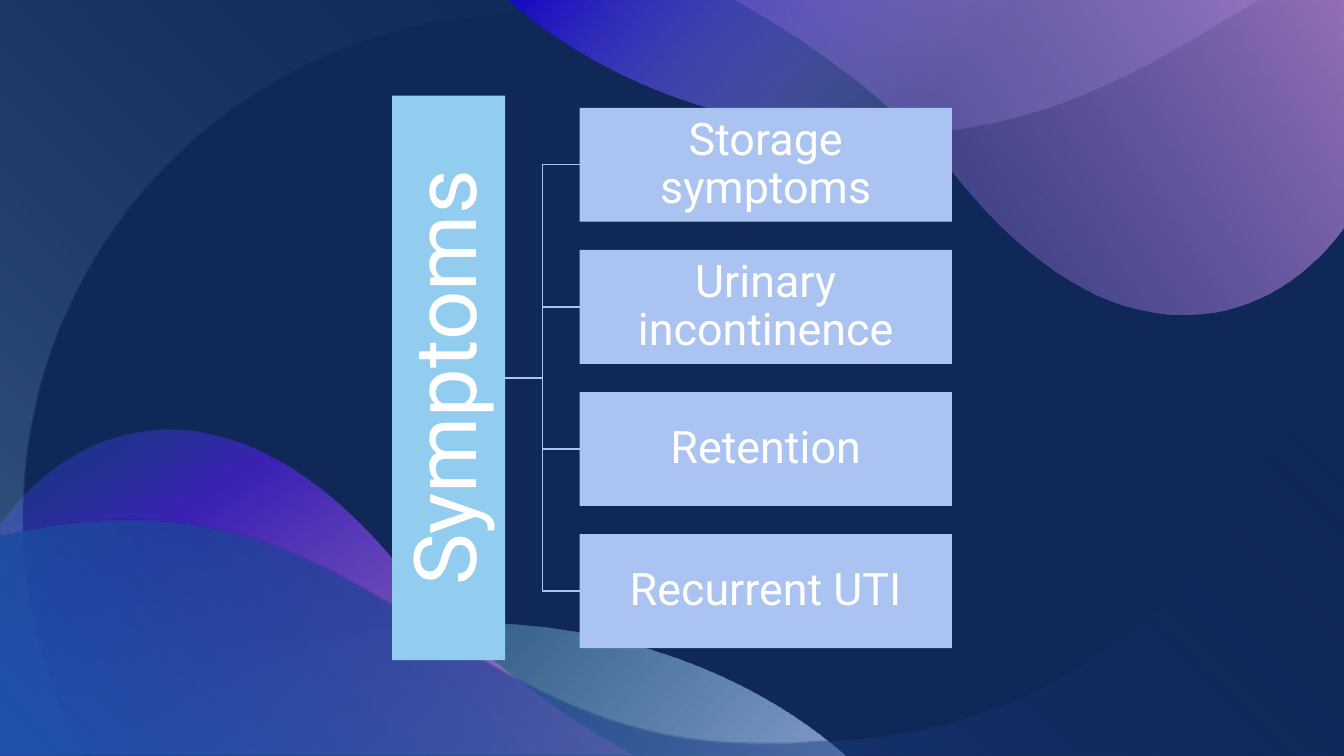
from math import cos, radians, sin

from pptx import Presentation
from pptx.dml.color import RGBColor
from pptx.enum.shapes import MSO_CONNECTOR, MSO_SHAPE
from pptx.enum.text import MSO_ANCHOR, PP_ALIGN
from pptx.oxml import parse_xml
from pptx.oxml.ns import nsdecls, qn
from pptx.util import Inches, Pt

NAVY, SKY, PERIWINKLE, WHITE = "102857", "92CDF0", "ABC3F0", "FFFFFF"
PINK, ROYAL = "F6A6F4", "1F51AE"

CREST = [(4.55, 6.18), (6.24, 6.17, 7.55, 6.77, 8.37, 7.48), (8.39, 7.5),
         (0.93, 7.5), (1.3, 7.28), (2.26, 6.7, 3.24, 6.19, 4.55, 6.18)]
LEFT_WAVE = [(0.01, 7.49), (6.28, 7.49), (5.93, 7.29),
             (5.15, 6.81, 4.45, 6.23, 3.97, 5.64),
             (2.42, 3.73, 0.88, 4.05, 0.06, 5.13), (0.01, 5.2)]
RIGHT_WAVE = [(13.34, 0), (7.29, 0), (7.62, 0.19),
              (8.38, 0.65, 9.05, 1.21, 9.51, 1.78),
              (11.01, 3.63, 12.51, 3.33, 13.3, 2.28), (13.34, 2.21)]
FRAME = [(-0.02, 0), (3.42, 0), (3.56, 0), (13.34, 0), (13.34, 2.17), (13.16, 2.21),
         (12.8, 2.3, 12.4, 2.34, 11.97, 2.34),
         (9.54, 2.33, 8.49, 0.17, 5.9, 0.13),
         (5.75, 0.12, 5.6, 0.13, 5.45, 0.13), (5.2, 0.15), (4.97, 0.16),
         (3.1, 0.25, 1.5, 1.38, 0.73, 2.98), (0.69, 3.07), (0.67, 3.12),
         (0.63, 3.19, 0.6, 3.26, 0.58, 3.33), (0.56, 3.39), (0.54, 3.43),
         (0.35, 3.96, 0.24, 4.54, 0.24, 5.14),
         (0.24, 5.92, 0.42, 6.65, 0.73, 7.3), (0.83, 7.5), (0.35, 7.5),
         (-0.02, 7.5), (-0.02, 3.06), (-0.03, 3.06), (-0.03, 2.21),
         (-0.02, 2.21), (-0.02, 1.8)]

CORNER_GLOW = ('<a:path path="circle"><a:fillToRect l="0" t="100000" '
               'r="100000" b="0"/></a:path>')


def color(value):
    return RGBColor.from_string(value)


def linear(degrees):
    return f'<a:lin ang="{degrees * 60000}" scaled="0"/>'


def half_turn(outline, width, height):
    return [tuple((height if i % 2 else width) - value for i, value in enumerate(step))
            for step in outline]


def to_local(step, bounds, rotation):
    left, top, width, height = bounds
    turn = radians(-rotation)
    points = []
    for x, y in zip(step[::2], step[1::2]):
        dx, dy = x - left - width / 2, y - top - height / 2
        points.append((Inches(width / 2 + dx * cos(turn) - dy * sin(turn)),
                       Inches(height / 2 + dx * sin(turn) + dy * cos(turn))))
    return points


def bend_lines(wave, steps, bounds):
    outline = wave._element.spPr.find(".//" + qn("a:path"))
    outline.set("w", str(Inches(bounds[2])))
    outline.set("h", str(Inches(bounds[3])))
    tags = ["moveTo"] + ["lnTo" if len(step) == 1 else "cubicBezTo" for step in steps[1:]]
    for node, tag, step in zip(list(outline), tags, steps):
        points = "".join(f'<a:pt x="{x}" y="{y}"/>' for x, y in step)
        outline.replace(node, parse_xml(f'<a:{tag} {nsdecls("a")}>{points}</a:{tag}>'))


def add_wave(slide, outline, bounds, stops, direction, rotation=0):
    steps = [to_local(step, bounds, rotation) for step in outline]
    builder = slide.shapes.build_freeform(*steps[0][0])
    builder.add_line_segments([step[-1] for step in steps[1:]], close=True)
    wave = builder.convert_to_shape()
    bend_lines(wave, steps, bounds)
    wave.left, wave.top, wave.width, wave.height = map(Inches, bounds)
    wave.rotation = rotation
    wave.shadow.inherit = False
    wave.line.fill.background()
    wave.fill.solid()
    stop_xml = "".join(
        f'<a:gs pos="{position * 1000}"><a:srgbClr val="{tone}">'
        f'<a:alpha val="{alpha * 1000}"/></a:srgbClr></a:gs>'
        for position, tone, alpha in stops)
    gradient = parse_xml(f'<a:gradFill {nsdecls("a")} rotWithShape="1">'
                         f'<a:gsLst>{stop_xml}</a:gsLst>{direction}</a:gradFill>')
    properties = wave._element.spPr
    properties.replace(properties.find(qn("a:solidFill")), gradient)


def add_box(slide, text, left, top, width, height, fill, size, inset):
    box = slide.shapes.add_shape(MSO_SHAPE.RECTANGLE, Inches(left), Inches(top),
                                 Inches(width), Inches(height))
    box.shadow.inherit = False
    box.fill.solid()
    box.fill.fore_color.rgb = color(fill)
    box.line.fill.background()
    frame = box.text_frame
    frame.word_wrap = True
    frame.vertical_anchor = MSO_ANCHOR.MIDDLE
    frame.margin_left = frame.margin_right = Inches(inset)
    frame.margin_top = frame.margin_bottom = Inches(inset)
    paragraph = frame.paragraphs[0]
    paragraph.text = text
    paragraph.alignment = PP_ALIGN.CENTER
    paragraph.line_spacing = 0.9
    paragraph.font.name = "Roboto"
    paragraph.font.size = Pt(size)
    paragraph.font.color.rgb = color(WHITE)
    return box


def add_branch(slide, parent, child):
    branch = slide.shapes.add_connector(MSO_CONNECTOR.ELBOW, 0, 0, 0, 0)
    branch.begin_connect(parent, 3)
    branch.end_connect(child, 1)
    branch.line.color.rgb = color(PERIWINKLE)
    branch.line.width = Pt(1)
    branch._element.spPr.append(parse_xml(f'<a:effectLst {nsdecls("a")}/>'))


def add_background(slide):
    slide.background.fill.solid()
    slide.background.fill.fore_color.rgb = color(NAVY)
    add_wave(slide, CREST, (0.93, 6.18, 7.46, 1.32),
             [(0, "64DFED", 0), (99, PERIWINKLE, 72)], linear(220), 180)
    add_wave(slide, LEFT_WAVE, (-0.16, 4.57, 6.61, 3.54),
             [(3, PINK, 54), (72, "3B21B4", 100), (97, ROYAL, 21)], linear(225), 11.8)
    add_wave(slide, FRAME, (-0.03, 0, 13.36, 7.5),
             [(0, SKY, 32), (77, NAVY, 0)], CORNER_GLOW)
    add_wave(slide, half_turn(FRAME, 13.31, 7.51), (-0.03, 0.01, 13.36, 7.5),
             [(0, ROYAL, 100), (77, NAVY, 0)], CORNER_GLOW)
    add_wave(slide, half_turn(CREST, 13.42, 7.5), (5.03, 0, 7.46, 1.32),
             [(41, "AAA5F9", 21), (98, "180DC2", 100)], linear(220))
    add_wave(slide, RIGHT_WAVE, (7.12, -0.6, 6.38, 3.43),
             [(0, PINK, 62), (100, "765FE1", 19)], linear(135), 11.8)


def main():
    deck = Presentation()
    deck.slide_width, deck.slide_height = Inches(13.33), Inches(7.5)
    slide = deck.slides.add_slide(deck.slide_layouts[6])
    add_background(slide)
    symptoms = add_box(slide, "Symptoms", 3.89, 0.95, 1.12, 5.6, SKY, 62, 0.04)
    symptoms.text_frame._txBody.bodyPr.set("vert", "vert270")
    kinds = ["Storage symptoms", "Urinary incontinence", "Retention", "Recurrent UTI"]
    for row, kind in enumerate(kinds):
        kind_box = add_box(slide, kind, 5.75, 1.07 + 1.41 * row, 3.69, 1.13,
                           PERIWINKLE, 32, 0.02)
        add_branch(slide, symptoms, kind_box)
    deck.save("out.pptx")


if __name__ == "__main__":
    main()
